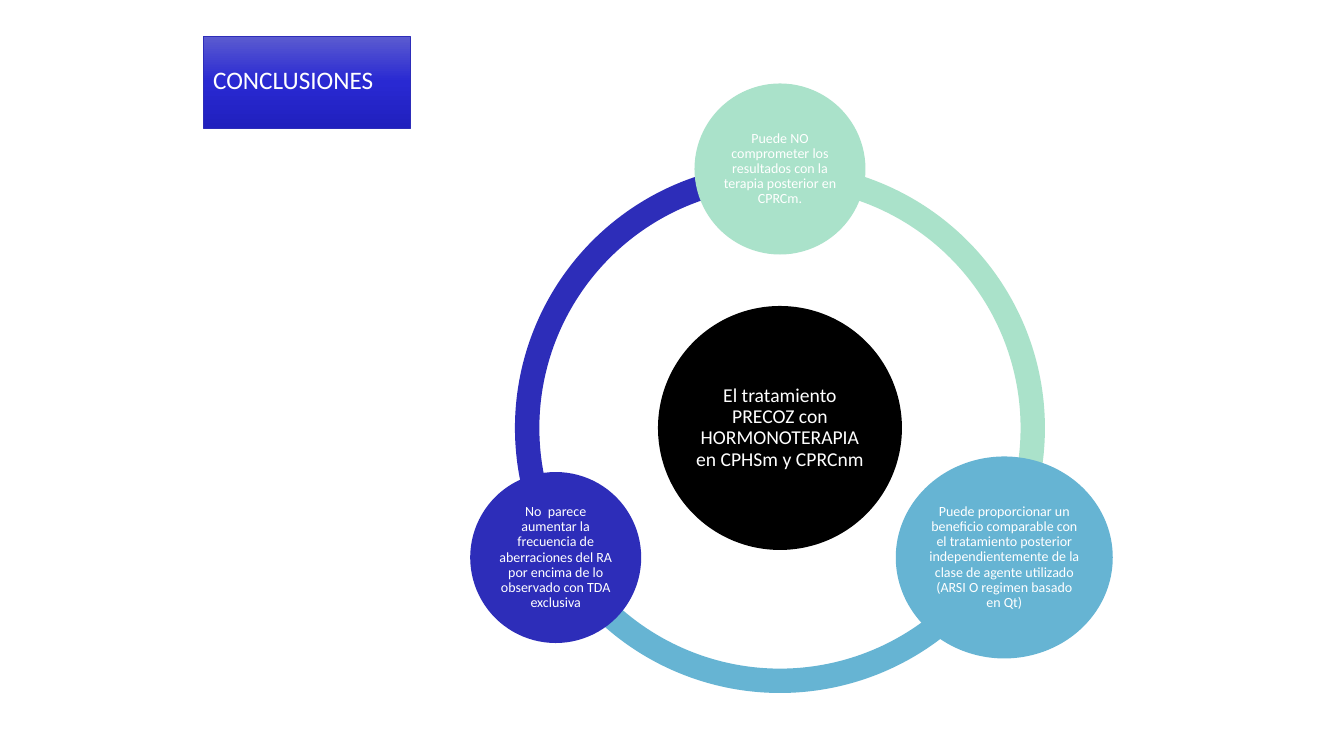
"""Build the conclusions slide: three findings on a ring around the main statement."""
from copy import deepcopy
from math import cos, radians, sin

from pptx import Presentation, util as u
from pptx.dml.color import RGBColor
from pptx.enum import shapes, text

PX = 914400 / 100.8
WHITE, BLUE, SKY, MINT = "FFFFFF", "2D2DB9", "66B4D3", "AAE2CA"


def px(*nums):
    return [u.Emu(round(n * PX)) for n in nums]


def tint(color, code):
    color.rgb = RGBColor.from_string(code)


deck = Presentation()
deck.slide_width, deck.slide_height = px(1344, 756)
slide = deck.slides.add_slide(deck.slide_layouts[5])

title = slide.shapes.title
title.left, title.top, title.width, title.height = px(203, 36, 207, 92)
title.fill.gradient()
title.fill.gradient_angle = 270
stops = title.fill.gradient_stops
first = stops[0]._gs
first.addnext(deepcopy(first))
for stop, spot, code in zip(title.fill.gradient_stops, (0, 0.5, 1), ("5B5BD0", "2929D2", "2020BE")):
    stop.position = spot
    tint(stop.color, code)
tint(title.line.color, BLUE)
title.line.width = u.Pt(0.5)
frame = title.text_frame
frame.text = "CONCLUSIONES"
frame.word_wrap = True
frame.auto_size = text.MSO_AUTO_SIZE.NONE
frame.vertical_anchor = text.MSO_ANCHOR.MIDDLE
para = frame.paragraphs[0]
para.alignment = text.PP_ALIGN.LEFT
para.line_spacing = 0.83
para.font.name, para.font.size = "Calibri", u.Pt(18)
tint(para.font.color, WHITE)

MID_X, MID_Y, RING, ORBIT = 780, 428, 530, 259
for start, end, code in ((150, 270, BLUE), (30, 150, SKY), (270, 30, MINT)):
    arc = slide.shapes.add_shape(
        shapes.MSO_SHAPE.BLOCK_ARC, *px(MID_X - RING / 2, MID_Y - RING / 2, RING, RING))
    for i, value in enumerate((start * 0.6, end * 0.6, 0.046)):
        arc.adjustments[i] = value
    arc.fill.solid()
    tint(arc.fill.fore_color, code)
    arc.line.fill.background()
    arc.shadow.inherit = False

nodes = [
    (0, 0, 244, 244, "000000", 14, 2,
     "El tratamiento PRECOZ con HORMONOTERAPIA en CPHSm y CPRCnm"),
    (ORBIT, 270, 171, 171, MINT, 10, 1,
     "Puede NO comprometer los resultados con la terapia posterior en CPRCm."),
    (ORBIT, 30, 217, 202, SKY, 10, 1,
     "Puede proporcionar un beneficio comparable con el tratamiento posterior "
     "independientemente de la clase de agente utilizado (ARSI O regimen basado en Qt)"),
    (ORBIT, 150, 171, 171, BLUE, 10, 1,
     "No  parece aumentar la frecuencia de aberraciones del RA por encima de lo "
     "observado con TDA exclusiva"),
]
for reach, turn, wide, high, code, size, inset, words in nodes:
    left = MID_X + reach * cos(radians(turn)) - wide / 2
    top = MID_Y + reach * sin(radians(turn)) - high / 2
    node = slide.shapes.add_shape(shapes.MSO_SHAPE.OVAL, *px(left, top, wide, high))
    node.fill.solid()
    tint(node.fill.fore_color, code)
    node.line.fill.background()
    node.shadow.inherit = False
    frame = node.text_frame
    frame.text = words
    frame.word_wrap = True
    frame.vertical_anchor = text.MSO_ANCHOR.MIDDLE
    frame.margin_left, frame.margin_top, frame.margin_right, frame.margin_bottom = px(*[inset] * 4)
    para = frame.paragraphs[0]
    para.alignment = text.PP_ALIGN.CENTER
    para.line_spacing = 0.9
    para.font.name, para.font.size = "Calibri", u.Pt(size)
    tint(para.font.color, WHITE)

deck.save("out.pptx")
